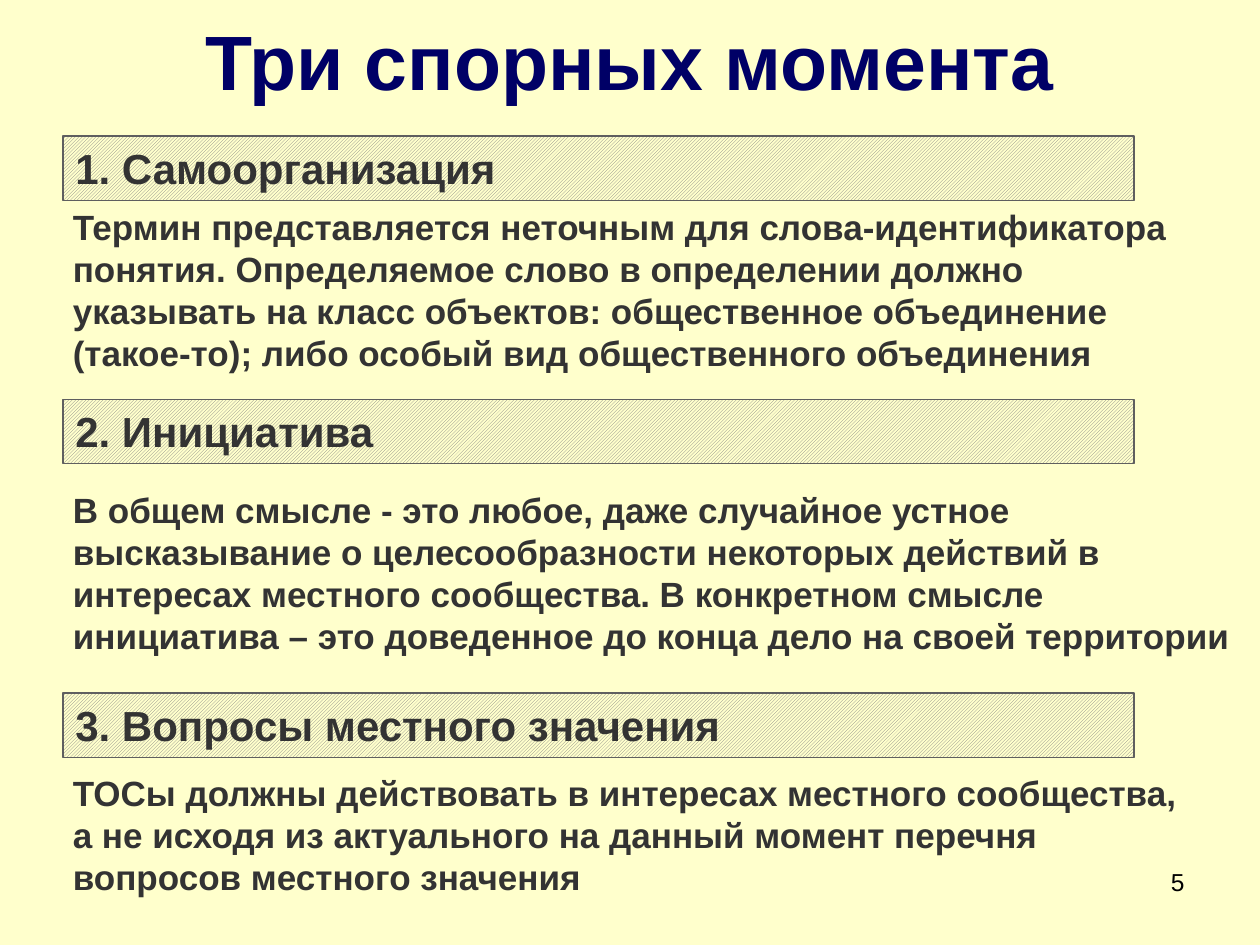
from dataclasses import dataclass

from pptx import Presentation
from pptx.dml.color import RGBColor
from pptx.enum.dml import MSO_PATTERN
from pptx.enum.shapes import MSO_SHAPE
from pptx.enum.text import MSO_ANCHOR, PP_ALIGN
from pptx.slide import Slide
from pptx.text.text import TextFrame
from pptx.util import Inches, Pt

BACKGROUND = "FFFFCC"
TITLE_COLOR = "000066"
TEXT_COLOR = "333333"


@dataclass
class Section:
    heading: str
    body: str
    heading_top: float
    body_top: float
    body_width: float
    body_height: float


SECTIONS = [
    Section(
        "1. Самоорганизация",
        "Термин представляется неточным для слова-идентификатора понятия. "
        "Определяемое слово в определении должно указывать на класс объектов: "
        "общественное объединение (такое-то); либо особый вид общественного объединения",
        1.08, 1.58, 9.33, 1.43,
    ),
    Section(
        "2. Инициатива",
        "В общем смысле - это любое, даже случайное устное высказывание "
        "о целесообразности некоторых действий в интересах местного сообщества. "
        "В конкретном смысле инициатива – это доведенное до конца дело на своей территории",
        3.17, 3.83, 9.75, 1.43,
    ),
    Section(
        "3. Вопросы местного значения",
        "ТОСы должны действовать в интересах местного сообщества, а не исходя "
        "из актуального на данный момент перечня вопросов местного значения",
        5.5, 6.07, 9.33, 1.1,
    ),
]


def color(value: str) -> RGBColor:
    return RGBColor.from_string(value)


def write(frame: TextFrame, text: str, size: float, text_color: str, bold: bool = True,
          align: PP_ALIGN = PP_ALIGN.LEFT, anchor: MSO_ANCHOR = MSO_ANCHOR.TOP,
          left_indent: float = 0) -> None:
    """Fill a frame with one uniformly formatted paragraph."""
    frame.word_wrap = True
    frame.vertical_anchor = anchor
    paragraph = frame.paragraphs[0]
    paragraph.text = text
    paragraph.alignment = align
    paragraph.font.name = "Arial"
    paragraph.font.size = Pt(size)
    paragraph.font.bold = bold
    paragraph.font.color.rgb = color(text_color)
    if left_indent:
        properties = paragraph._p.get_or_add_pPr()
        properties.set("marL", str(Inches(left_indent)))
        properties.set("indent", "0")


def add_title(slide: Slide, text: str) -> None:
    title = slide.shapes.title
    title.left, title.top = Inches(0), Inches(0)
    title.width, title.height = Inches(10), Inches(0.95)
    write(title.text_frame, text, 44, TITLE_COLOR,
          align=PP_ALIGN.CENTER, anchor=MSO_ANCHOR.MIDDLE)


def add_section(slide: Slide, section: Section) -> None:
    # Body text
    body = slide.shapes.add_textbox(Inches(0.17), Inches(section.body_top),
                                    Inches(section.body_width), Inches(section.body_height))
    write(body.text_frame, section.body, 20, TEXT_COLOR,
          anchor=MSO_ANCHOR.MIDDLE, left_indent=0.31)

    # Hatched heading bar
    bar = slide.shapes.add_shape(MSO_SHAPE.RECTANGLE, Inches(0.5), Inches(section.heading_top),
                                 Inches(8.5), Inches(0.51))
    bar.shadow.inherit = False
    bar.fill.patterned()
    bar.fill.pattern = MSO_PATTERN.LIGHT_UPWARD_DIAGONAL
    bar.fill.fore_color.rgb = color("808080")
    bar.fill.back_color.rgb = color(BACKGROUND)
    bar.line.color.rgb = color("5F5F5F")
    bar.line.width = Pt(0.75)
    write(bar.text_frame, section.heading, 24, TEXT_COLOR)


def add_page_number(slide: Slide, number: str) -> None:
    box = slide.shapes.add_textbox(Inches(7.17), Inches(6.83), Inches(2.33), Inches(0.52))
    write(box.text_frame, number, 14, "000000", bold=False, align=PP_ALIGN.RIGHT)


def main() -> None:
    presentation = Presentation()
    presentation.slide_width = Inches(10)
    presentation.slide_height = Inches(7.5)
    slide = presentation.slides.add_slide(presentation.slide_layouts[5])
    slide.background.fill.solid()
    slide.background.fill.fore_color.rgb = color(BACKGROUND)

    add_title(slide, "Три спорных момента")
    for section in SECTIONS:
        add_section(slide, section)
    add_page_number(slide, "5")
    presentation.save("out.pptx")


if __name__ == "__main__":
    main()
